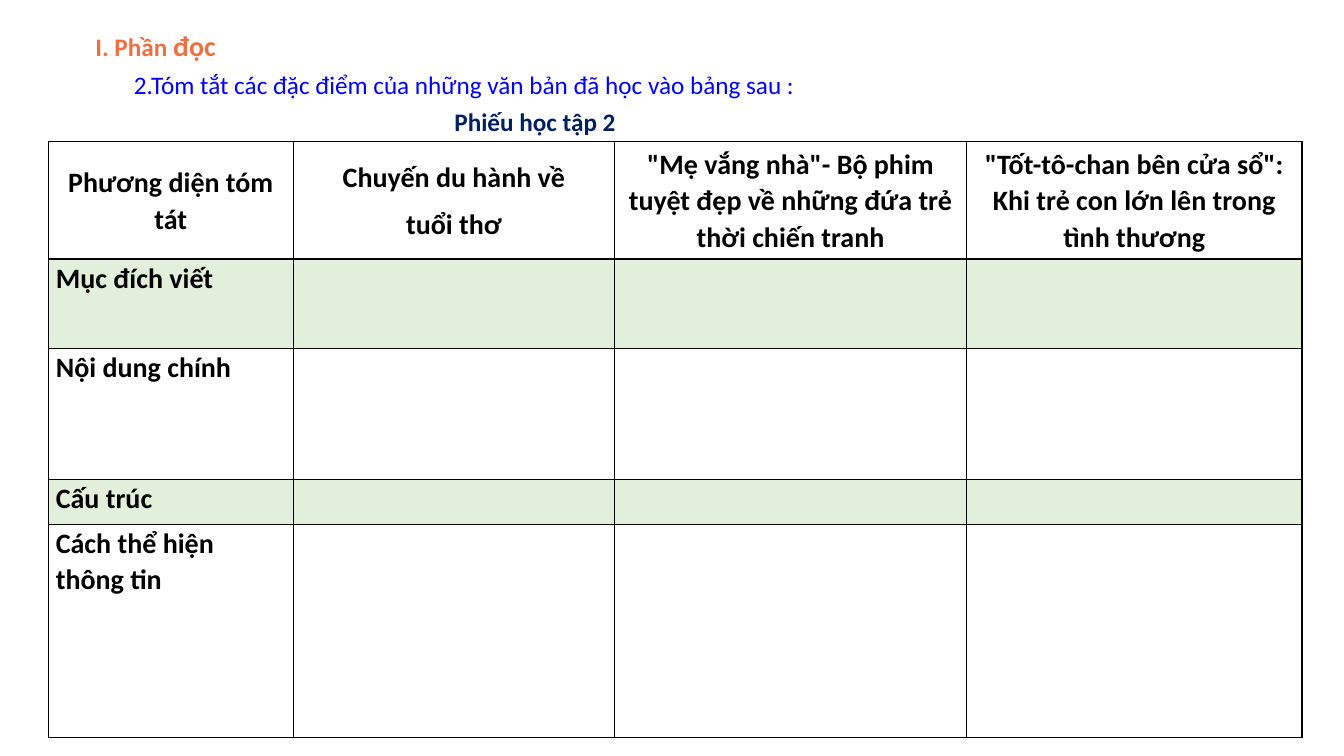
"""Builds the reading review worksheet slide with its summary table."""
from lxml import etree
from pptx import Presentation
from pptx.dml.color import RGBColor
from pptx.enum import text
from pptx.oxml import ns
from pptx.util import Pt

BLACK = RGBColor(0x00, 0x00, 0x00)
BLUE = RGBColor(0x00, 0x00, 0xFF)
ORANGE = RGBColor(0xEC, 0x70, 0x43)
NAVY = RGBColor(0x00, 0x20, 0x60)
GREEN = RGBColor(0xE2, 0xEF, 0xDA)

CENTER, JUSTIFY, LEFT = (text.PP_ALIGN.CENTER, text.PP_ALIGN.JUSTIFY,
                         text.PP_ALIGN.LEFT)
TOP, MIDDLE, BOTTOM = (text.MSO_ANCHOR.TOP, text.MSO_ANCHOR.MIDDLE,
                       text.MSO_ANCHOR.BOTTOM)

HEADINGS = [
    ((88.5, 45.5, 543.5, 29), [[("2.Tóm tắt các đặc điểm của những văn bản đã học vào bảng sau :", 18)]],
     dict(color=BLUE, anchor=MIDDLE)),
    ((61, 9.5, 248.5, 39), [[("I. Phần ", 18), ("đọc", 20)]],
     dict(color=ORANGE, bold=True, align=JUSTIFY, spacing=1.3)),
    ((317.5, 65, 270, 40), [[("Phiếu học tập 2", 18)]],
     dict(color=NAVY, bold=True, align=JUSTIFY, anchor=BOTTOM, margins=(7.2, 7.2))),
]
COLUMNS = [
    ("Phương diện tóm tát",),
    ("Chuyến du hành về", "tuổi thơ"),
    ('"Mẹ vắng nhà"- Bộ phim tuyệt đẹp về những đứa trẻ thời chiến tranh',),
    ('"Tốt-tô-chan bên cửa sổ": Khi trẻ con lớn lên trong tình thương',),
]
ASPECTS = ["Mục đích viết", "Nội dung chính", "Cấu trúc", "Cách thể hiện thông tin"]
COLUMN_WIDTHS = [175, 229.5, 251.5, 239.5]
ROW_HEIGHTS = [84, 64, 93.5, 32, 152.5]
TABLE_LEFT, TABLE_TOP = 34.5, 101


def write(box, paragraphs, color=BLACK, bold=False, align=LEFT, anchor=TOP,
          spacing=1.0, after=0, margins=(7.2, 3.6)):
    tf = box.text_frame
    box.vertical_anchor = anchor
    box.margin_left = box.margin_right = Pt(margins[0])
    box.margin_top = box.margin_bottom = Pt(margins[1])
    for i, runs in enumerate(paragraphs):
        p = tf.add_paragraph() if i else tf.paragraphs[0]
        p.alignment, p.line_spacing, p.space_after = align, spacing, Pt(after)
        for words, size in runs:
            r = p.add_run()
            r.text = words
            r.font.name, r.font.size, r.font.bold = "Calibri", Pt(size), bold
            r.font.color.rgb = color


def add_borders(cell):
    tcPr = cell._tc.get_or_add_tcPr()
    for i, side in enumerate(("lnL", "lnR", "lnT", "lnB")):
        ln = etree.Element(ns.qn("a:" + side), w=str(Pt(1)))
        fill = etree.SubElement(ln, ns.qn("a:solidFill"))
        etree.SubElement(fill, ns.qn("a:srgbClr"), val=str(BLACK))
        tcPr.insert(i, ln)


def add_summary(s):
    frame = s.shapes.add_table(
        len(ROW_HEIGHTS), len(COLUMN_WIDTHS), Pt(TABLE_LEFT), Pt(TABLE_TOP),
        Pt(sum(COLUMN_WIDTHS)), Pt(sum(ROW_HEIGHTS)))
    table = frame.table
    for column, width in zip(table.columns, COLUMN_WIDTHS):
        column.width = Pt(width)
    blanks = [()] * (len(COLUMNS) - 1)
    rows = [COLUMNS] + [[(aspect,)] + blanks for aspect in ASPECTS]
    for i, (row, height, lines) in enumerate(zip(table.rows, ROW_HEIGHTS, rows)):
        row.height = Pt(height)
        for cell, paragraphs in zip(row.cells, lines):
            write(cell, [[(words, 20)] for words in paragraphs], bold=True,
                  align=LEFT if i else CENTER, anchor=TOP if i else MIDDLE,
                  spacing=1.07, after=8, margins=(5.4, 0))
            if i % 2:
                cell.fill.solid()
                cell.fill.fore_color.rgb = GREEN
            else:
                cell.fill.background()
            add_borders(cell)


def main():
    prs = Presentation()
    prs.slide_width, prs.slide_height = Pt(960), Pt(540)
    s = prs.slides.add_slide(prs.slide_layouts[6])
    add_summary(s)
    for place, paragraphs, style in HEADINGS:
        sp = s.shapes.add_textbox(*map(Pt, place))
        sp.text_frame.word_wrap = True
        write_heading(sp, paragraphs, style)
    prs.save("out.pptx")


def write_heading(sp, paragraphs, style):
    tf = sp.text_frame
    write(sp, paragraphs, **style)
    tf.vertical_anchor = style.get("anchor", TOP)
    side, edge = style.get("margins", (7.2, 3.6))
    tf.margin_left = tf.margin_right = Pt(side)
    tf.margin_top = tf.margin_bottom = Pt(edge)


if __name__ == "__main__":
    main()
